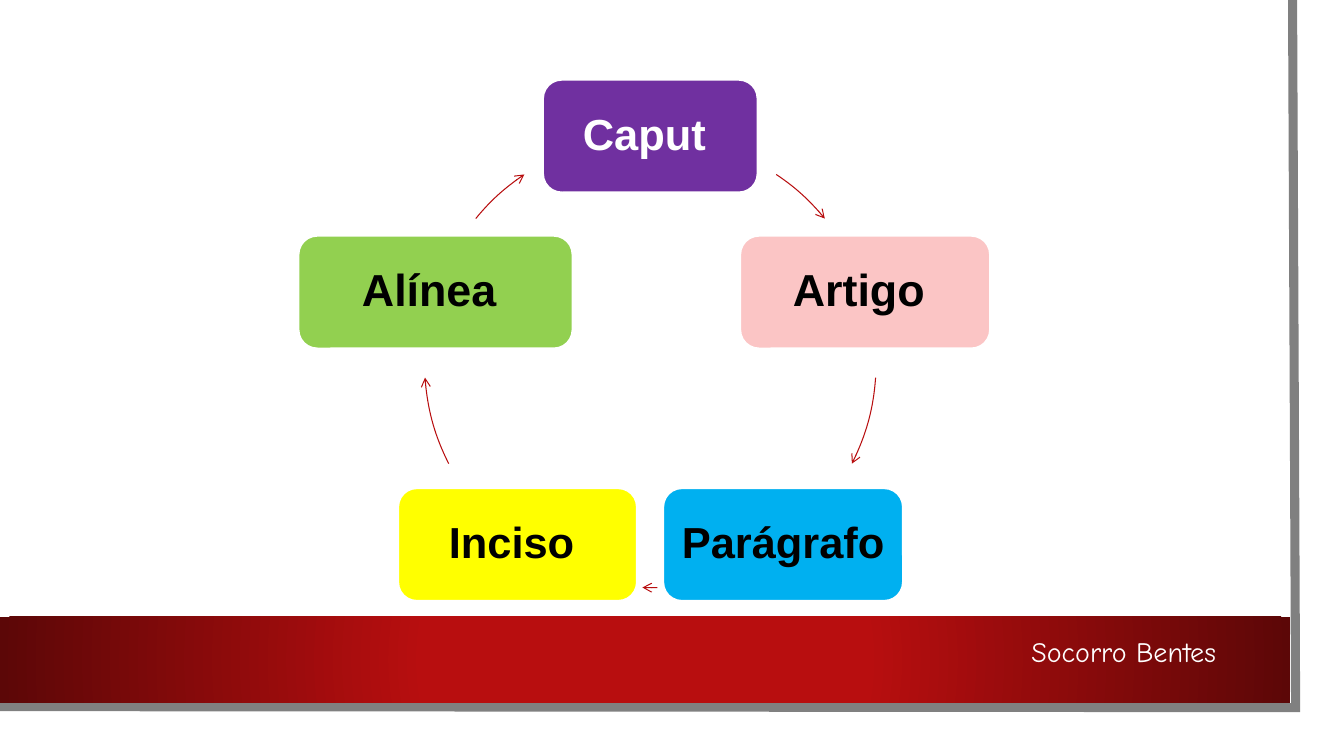
import math

import pptx
import pptx.util
from lxml import etree
from pptx.dml.color import RGBColor
from pptx.enum.shapes import MSO_SHAPE
from pptx.enum.text import MSO_ANCHOR, PP_ALIGN
from pptx.oxml.ns import qn
from pptx.util import Inches, Pt

WIDE, HIGH = 13.33, 7.5
WHITE = RGBColor(0xFF, 0xFF, 0xFF)
BLACK = RGBColor(0, 0, 0)
GREY = RGBColor(0x80, 0x80, 0x80)
RED = RGBColor(0xB8, 0x0E, 0x0F)
DARK = RGBColor(0x5C, 0x07, 0x07)
PURPLE = RGBColor(0x70, 0x30, 0xA0)
PINK = RGBColor(0xFB, 0xC5, 0xC5)
BLUE = RGBColor(0x00, 0xB0, 0xF0)
YELLOW = RGBColor(0xFF, 0xFF, 0x00)
GREEN = RGBColor(0x92, 0xD0, 0x50)

# Label, width, fill, text colour and size, clockwise from the top
STEPS = [
    ("Caput ", 2.13, PURPLE, WHITE, 31),
    ("Artigo ", 2.48, PINK, BLACK, 32),
    ("Parágrafo", 2.38, BLUE, BLACK, 31),
    ("Inciso ", 2.37, YELLOW, BLACK, 31),
    ("Alínea ", 2.72, GREEN, BLACK, 32),
]
# Start and end of each arrow, in degrees clockwise from the top
ARCS = [(33.9, 50.6), (94, 116.8), (178.2, 182), (243.2, 266), (309.4, 326.1)]


def add_box(slide, kind, left, top, width, height):
    box = slide.shapes.add_shape(
        kind, Inches(left), Inches(top), Inches(width), Inches(height))
    box.shadow.inherit = False
    return box


def add_path(slide, points, color, weight):
    """Draw an open, unfilled line through points given in inches."""
    spots = [(Inches(x), Inches(y)) for x, y in points]
    pen = slide.shapes.build_freeform(*spots[0])
    pen.add_line_segments(spots[1:], close=False)
    path = pen.convert_to_shape()
    path.shadow.inherit = False
    path.fill.background()
    path.line.color.rgb = color
    path.line.width = Pt(weight)
    etree.SubElement(path.line._get_or_add_ln(), qn("a:miter"), lim="800000")
    return path


def add_frame(slide, width, height):
    """Draw the grey edge on the right and bottom of the page."""
    add_path(slide, [(width - 0.03, 0), (width, height), (-0.03, height - 0.01)],
             GREY, 6.5)


def add_band(slide, left, top, width, height):
    band = add_box(slide, MSO_SHAPE.RECTANGLE, left, top, width, height)
    band.line.fill.background()
    band.fill.gradient()
    for stop, color, place in zip(band.fill.gradient_stops, (RED, DARK), (0.34, 1)):
        stop.color.rgb = color
        stop.position = place
    grad = band.element.spPr.find(qn("a:gradFill"))
    grad.remove(grad.find(qn("a:lin")))
    focus = etree.SubElement(grad, qn("a:path"), path="circle")
    etree.SubElement(focus, qn("a:fillToRect"), l="50000", t="50000",
                     r="50000", b="50000")

    label = slide.shapes.add_textbox(
        Inches(left + width - 4.79), Inches(top + 0.13), Inches(4.15), Inches(0.45))
    label.text_frame.word_wrap = True
    para = label.text_frame.paragraphs[0]
    para.text = "Socorro Bentes"
    para.alignment = PP_ALIGN.RIGHT
    para.font.name = "Comic Neue"
    para.font.size = Pt(20)
    para.font.color.rgb = WHITE


def add_node(slide, mid, width, height, text, fill, ink, size):
    x, y = mid
    node = add_box(slide, MSO_SHAPE.ROUNDED_RECTANGLE,
                   x - width / 2, y - height / 2, width, height)
    node.fill.solid()
    node.fill.fore_color.rgb = fill
    node.line.color.rgb = WHITE
    node.line.width = Pt(1.5)
    frame = node.text_frame
    frame.word_wrap = False
    frame.vertical_anchor = MSO_ANCHOR.MIDDLE
    para = frame.paragraphs[0]
    para.text = text
    para.alignment = PP_ALIGN.CENTER
    para.line_spacing = 0.9
    para.font.name = "Arial"
    para.font.size = Pt(size)
    para.font.bold = True
    para.font.color.rgb = ink


def add_arc(slide, left, top, size, start, end):
    """Draw an arrow along part of the circle that fills the given square."""
    arrow = add_path(slide, [(left, top), (left + size, top + size)], RED, 0.75)
    etree.SubElement(arrow.line._get_or_add_ln(), qn("a:tailEnd"), type="arrow")
    side = Inches(size)
    half = side / 2
    turn = math.radians(start)
    track = arrow.element.spPr.find(".//" + qn("a:path"))
    for step in list(track):
        track.remove(step)
    move = etree.SubElement(track, qn("a:moveTo"))
    etree.SubElement(move, qn("a:pt"), x=str(round(half + half * math.sin(turn))),
                     y=str(round(half - half * math.cos(turn))))
    etree.SubElement(track, qn("a:arcTo"), wR=str(round(half)), hR=str(round(half)),
                     stAng=str(round((start - 90) % 360 * 60000)),
                     swAng=str(round((end - start) * 60000)))


def add_cycle(slide, left, top, size):
    """Place the steps evenly round a circle, with arrows between them."""
    radius = size / 2
    for i, (text, width, fill, ink, points) in enumerate(STEPS):
        turn = math.tau * i / len(STEPS)
        mid = (left + radius + radius * math.sin(turn),
               top + radius - radius * math.cos(turn))
        add_node(slide, mid, width, size / 4, text, fill, ink, points)
    for start, end in ARCS:
        add_arc(slide, left, top, size, start, end)


def main():
    deck = pptx.Presentation()
    deck.slide_width, deck.slide_height = Inches(WIDE), Inches(HIGH)
    slide = deck.slides.add_slide(deck.slide_layouts[6])
    slide.background.fill.solid()
    slide.background.fill.fore_color.rgb = WHITE
    add_frame(slide, 12.85, 7.02)
    add_band(slide, 0, 6.12, 12.8, 0.85)
    add_cycle(slide, 4.21, 1.35, 4.48)
    deck.save("out.pptx")


if __name__ == "__main__":
    main()
